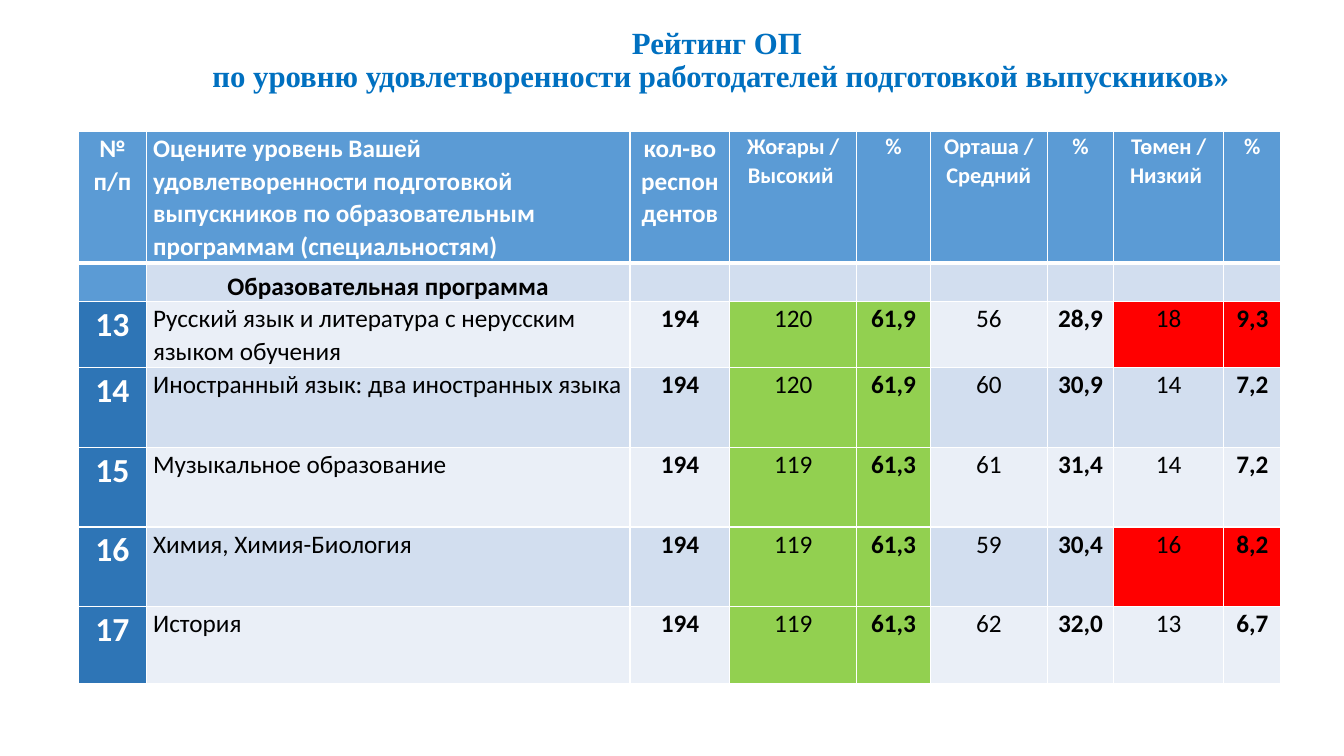
from pptx import Presentation
from pptx.dml.color import RGBColor
from pptx.enum.text import MSO_ANCHOR as Anchor, PP_ALIGN as Align
from pptx.oxml.ns import qn
from pptx.util import Pt
from lxml.etree import Element, SubElement

WHITE = RGBColor(0xFF, 0xFF, 0xFF)
BLACK = RGBColor(0, 0, 0)
TITLE_BLUE = RGBColor(0x00, 0x70, 0xC0)
HEADER_BLUE = RGBColor(0x5B, 0x9B, 0xD5)
NUMBER_BLUE = RGBColor(0x2E, 0x75, 0xB6)
BAND_DARK = RGBColor(0xD2, 0xDE, 0xEF)
BAND_LIGHT = RGBColor(0xEA, 0xEF, 0xF7)
GREEN = RGBColor(0x92, 0xD0, 0x50)
RED = RGBColor(0xFF, 0x00, 0x00)

TITLE_LINES = ["Рейтинг ОП ",
               "по уровню удовлетворенности работодателей подготовкой выпускников»"]
HEADERS = ["№ п/п",
           "Оцените уровень Вашей удовлетворенности подготовкой выпускников "
           "по образовательным программам (специальностям)",
           "кол-во респондентов", "Жоғары / Высокий ", "%",
           "Орташа / Средний", "%", "Төмен / Низкий ", "%"]
SECTION = "Образовательная программа"
PROGRAMS = [
    ("13", "Русский язык и литература с нерусским языком обучения",
     "194", "120", "61,9", "56", "28,9", "18", "9,3"),
    ("14", "Иностранный язык: два иностранных языка",
     "194", "120", "61,9", "60", "30,9", "14", "7,2"),
    ("15", "Музыкальное образование",
     "194", "119", "61,3", "61", "31,4", "14", "7,2"),
    ("16", "Химия, Химия-Биология",
     "194", "119", "61,3", "59", "30,4", "16", "8,2"),
    ("17", "История",
     "194", "119", "61,3", "62", "32,0", "13", "6,7"),
]
COLUMN_WIDTHS = [48.2, 345.6, 71.3, 90.7, 52.6, 83.5, 47.5, 78.5, 41]
ROW_HEIGHTS = [76.3, 28, 27.4, 56.9, 56.9, 56.9, 54.7]
NUMBER, NAME = 0, 1
HIGH_COLUMNS, LOW_COLUMNS = (3, 4), (7, 8)
LOW_LIMIT = 8  # percent of low marks that is flagged in red


def write(para, text, size=18, color=BLACK, bold=False, font="Calibri",
          align=Align.CENTER, spacing=1.07):
    para.alignment = align
    para.line_spacing = spacing
    span = para.add_run()
    span.text = text
    span.font.name = font
    span.font.size = Pt(size)
    span.font.bold = bold
    span.font.color.rgb = color


def set_borders(cell, top=1, bottom=1):
    properties = cell._tc.get_or_add_tcPr()
    widths = {"a:lnL": 1, "a:lnR": 1, "a:lnT": top, "a:lnB": bottom}
    for position, (tag, width) in enumerate(widths.items()):
        line = Element(qn(tag), w=str(int(Pt(width))))
        fill = SubElement(line, qn("a:solidFill"))
        SubElement(fill, qn("a:srgbClr"), val=str(WHITE))
        properties.insert(position, line)


def fill_cell(cell, background, text="", anchor=Anchor.TOP, top=1, bottom=1, **style):
    cell.fill.solid()
    cell.fill.fore_color.rgb = background
    cell.margin_left = cell.margin_right = Pt(5)
    cell.margin_top = cell.margin_bottom = 0
    cell.vertical_anchor = anchor
    set_borders(cell, top, bottom)
    if text:
        write(cell.text_frame.paragraphs[0], text, **style)


def add_title(page, left, top, width, height):
    box = page.shapes.title
    box.left, box.top, box.width, box.height = map(Pt, (left, top, width, height))
    frame = box.text_frame
    frame.word_wrap = True
    frame.vertical_anchor = Anchor.MIDDLE
    para = frame.paragraphs[0]
    for index, text in enumerate(TITLE_LINES):
        if index:
            para.add_line_break()
        write(para, text, size=22, color=TITLE_BLUE, bold=True,
              font="Times New Roman", spacing=0.9)


def program_color(column, low_percent, band):
    if column == NUMBER:
        return NUMBER_BLUE
    if column in HIGH_COLUMNS:
        return GREEN
    if column in LOW_COLUMNS and low_percent > LOW_LIMIT:
        return RED
    return band


def add_rating_table(page, left, top):
    width, height = sum(COLUMN_WIDTHS), sum(ROW_HEIGHTS)
    table = page.shapes.add_table(len(ROW_HEIGHTS), len(COLUMN_WIDTHS), Pt(left),
                                  Pt(top), Pt(width), Pt(height)).table
    for column, size in zip(table.columns, COLUMN_WIDTHS):
        column.width = Pt(size)
    for row, size in zip(table.rows, ROW_HEIGHTS):
        row.height = Pt(size)

    # Header row and section row
    for column, text in enumerate(HEADERS):
        fill_cell(table.cell(0, column), HEADER_BLUE, text, bottom=3,
                  size=18 if column < HIGH_COLUMNS[0] else 16,
                  color=WHITE, bold=True,
                  align=Align.LEFT if column == NAME else Align.CENTER)
        fill_cell(table.cell(1, column),
                  HEADER_BLUE if column == NUMBER else BAND_DARK,
                  SECTION if column == NAME else "",
                  anchor=Anchor.BOTTOM, top=3, bold=True)

    # Programme rows
    for index, program in enumerate(PROGRAMS):
        band = BAND_DARK if index % 2 else BAND_LIGHT
        low_percent = float(program[-1].replace(",", "."))
        for column, text in enumerate(program):
            numbered = column == NUMBER
            fill_cell(table.cell(index + 2, column),
                      program_color(column, low_percent, band), text,
                      size=24 if numbered else 18,
                      color=WHITE if numbered else BLACK,
                      bold=column % 2 == 0,
                      align=Align.LEFT if column == NAME else Align.CENTER)


def main():
    deck = Presentation()
    deck.slide_width, deck.slide_height = Pt(960), Pt(540)
    page = deck.slides.add_slide(deck.slide_layouts[5])
    add_title(page, 100.8, 13, 828, 61.2)
    add_rating_table(page, 56.2, 93.6)
    deck.save("out.pptx")


if __name__ == "__main__":
    main()
